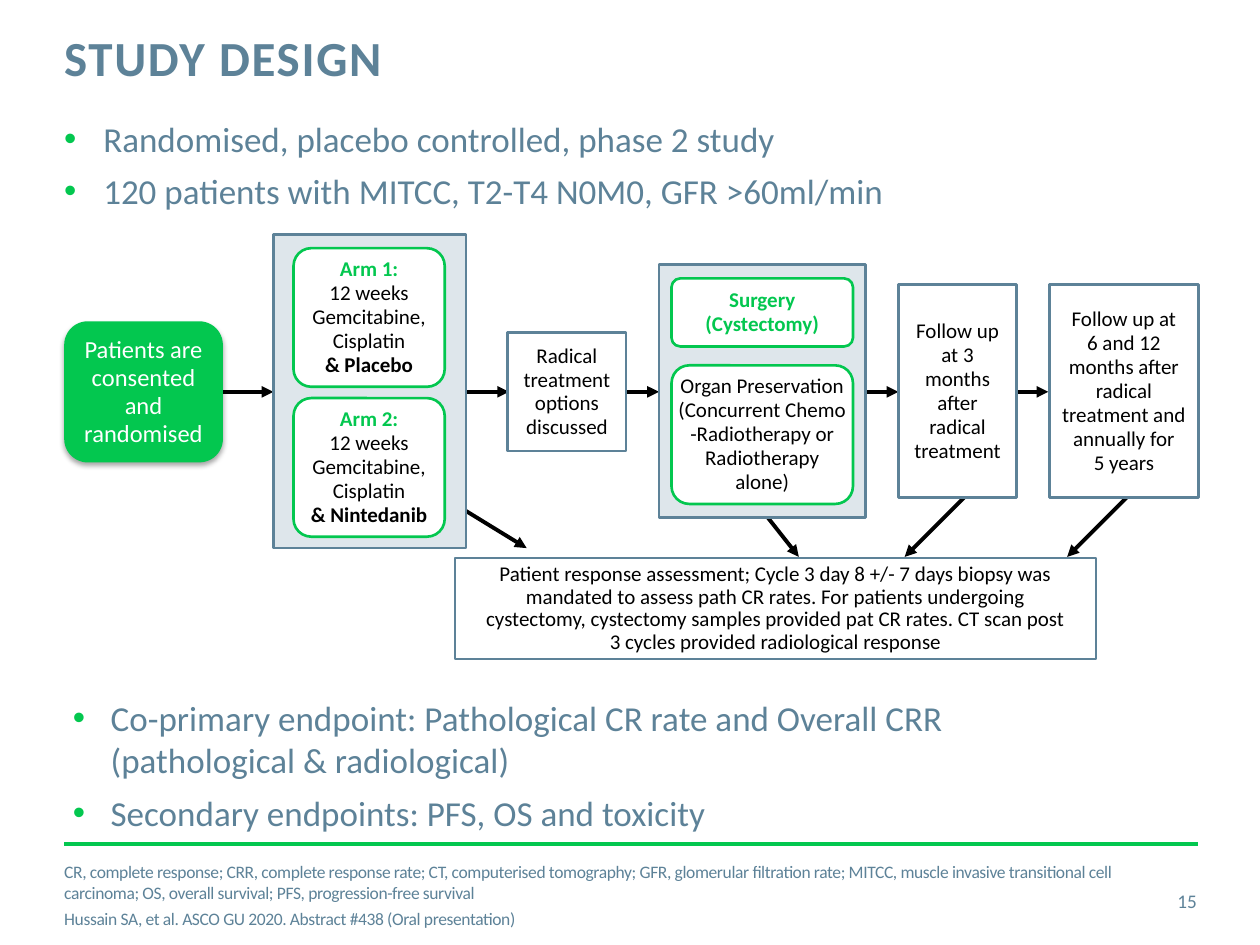
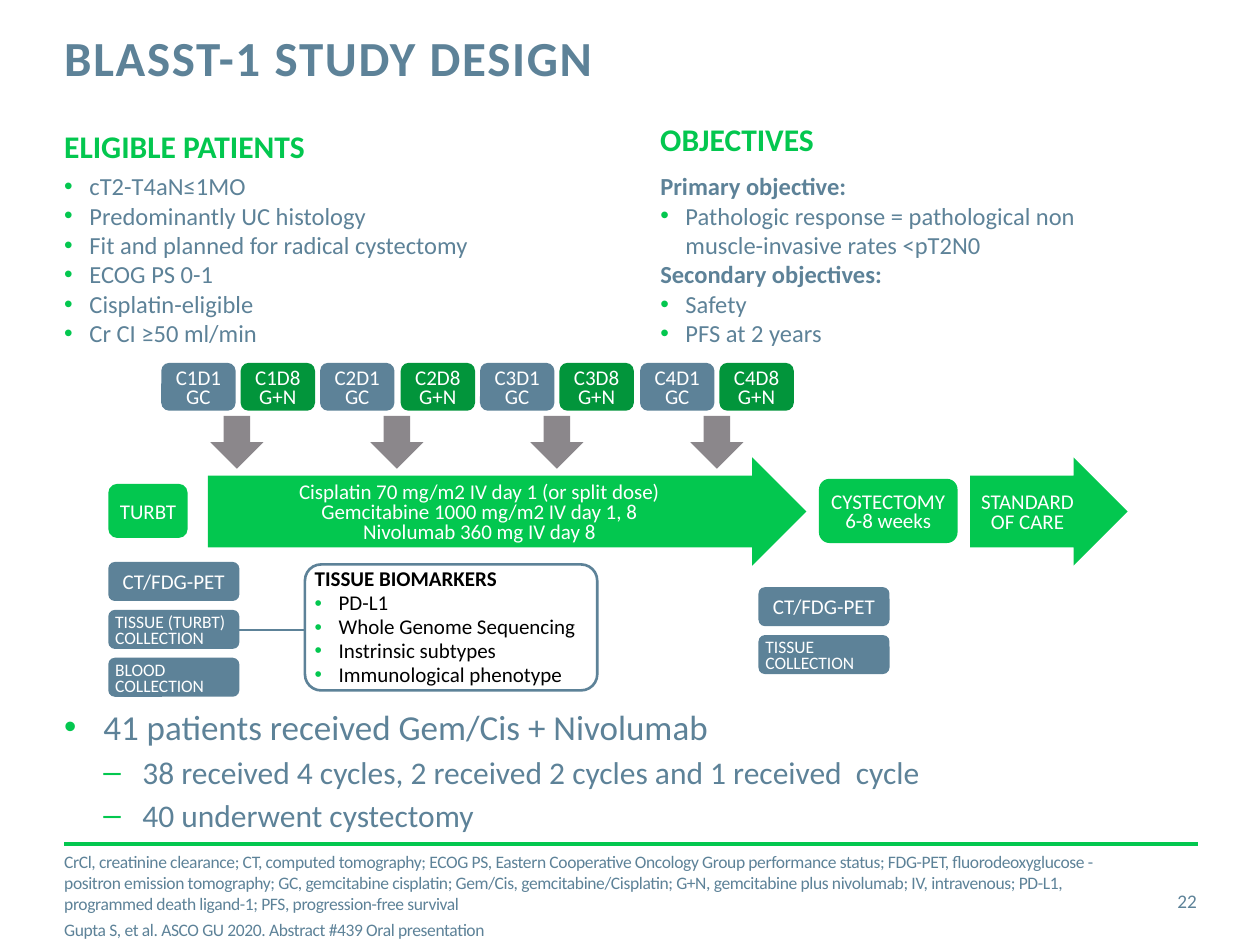
from copy import deepcopy

from lxml import etree
from pptx import Presentation
from pptx import util as u
from pptx.dml.color import RGBColor
from pptx.enum import shapes, text
from pptx.oxml import parse_xml
from pptx.oxml.ns import nsdecls, qn

PX = 9144  # 100 px to the inch
GREEN, DARK_GREEN, SLATE, PALE = "03C74F", "02953B", "5D8298", "DEE6EB"
GREY, BLACK, WHITE = "8B878B", "000000", "FFFFFF"
FONT = "Calibri"

rgb = RGBColor.from_string
KIND = shapes.MSO_SHAPE
TOP, MIDDLE = text.MSO_ANCHOR.TOP, text.MSO_ANCHOR.MIDDLE
CENTER, LEFT, RIGHT = text.PP_ALIGN.CENTER, text.PP_ALIGN.LEFT, text.PP_ALIGN.RIGHT
BULLET_LEVELS = {"• ": 1, "– ": 2}


def add_box(slide, kind, frame, paragraphs=(), fill=None, line=None, adjustments=(),
            margins=(4, 4, 4, 4), anchor=MIDDLE, size=12, color=BLACK, bold=False,
            tracking=0, hang=0, before=0, **layout):
    """Add a preset shape, or a text box if kind is None.

    A paragraph is a string or a list of (text, font changes); a leading
    "• " or "– " makes it a bullet, indented by hang px a level.
    """
    frame = [value * PX for value in frame]
    if kind is None:
        shape = slide.shapes.add_textbox(*frame)
    else:
        shape = slide.shapes.add_shape(kind, *frame)
        shape.shadow.inherit = False
        for index, value in enumerate(adjustments):
            shape.adjustments[index] = value
        if fill:
            shape.fill.solid()
            shape.fill.fore_color.rgb = rgb(fill)
        if line:
            shape.line.color.rgb = rgb(line)
            shape.line.width = u.Pt(1.5)
        else:
            shape.line.fill.background()

    text_frame = shape.text_frame
    text_frame.word_wrap = True
    text_frame.vertical_anchor = anchor
    for side, margin in zip(("left", "top", "right", "bottom"), margins):
        setattr(text_frame, f"margin_{side}", margin * PX)

    for index, content in enumerate(paragraphs):
        paragraph = text_frame.add_paragraph() if index else text_frame.paragraphs[0]
        runs = [(content, {})] if isinstance(content, str) else content
        marker = runs[0][0][:2]
        if marker in BULLET_LEVELS:
            runs = [(runs[0][0][2:], runs[0][1]), *runs[1:]]
            properties = paragraph._p.get_or_add_pPr()
            properties.set("marL", str(BULLET_LEVELS[marker] * hang * PX))
            properties.set("indent", str(-hang * PX))
            for bullet_part in (
                f'<a:buClr {nsdecls("a")}><a:srgbClr val="{GREEN}"/></a:buClr>',
                f'<a:buFont {nsdecls("a")} typeface="Arial"/>',
                f'<a:buChar {nsdecls("a")} char="{marker[0]}"/>',
            ):
                properties.append(parse_xml(bullet_part))
        for name, value in layout.items():
            setattr(paragraph, name, value)
        if index and before:
            paragraph.space_before = u.Pt(before)

        for words, changes in runs:
            values = {"size": size, "bold": bold, "color": color, **changes}
            for number, part in enumerate(words.split("\n")):
                if number:
                    paragraph.add_line_break()
                    paragraph._p[-1].append(deepcopy(run._r.rPr))
                run = paragraph.add_run()
                run.text = part
                font = {"name": FONT, "size": u.Pt(values["size"]), "bold": values["bold"]}
                for name, value in font.items():
                    setattr(run.font, name, value)
                run.font.color.rgb = rgb(values["color"])
                if tracking:
                    run._r.rPr.set("spc", str(tracking))
    return shape


def add_line(slide, start, end, color, width, arrow=False):
    connector = slide.shapes.add_connector(
        shapes.MSO_CONNECTOR.STRAIGHT, *(value * PX for value in (*start, *end)))
    connector.line.color.rgb = rgb(color)
    connector.line.width = u.Pt(width)
    if arrow:
        outline = connector.line._get_or_add_ln()
        etree.SubElement(outline, qn("a:tailEnd"), type="triangle")
    etree.SubElement(connector._element.spPr, qn("a:effectLst"))


presentation = Presentation()
presentation.slide_width, presentation.slide_height = 1000 * PX, 750 * PX

# Shared title, rule, footnotes and page number
NO_MARGINS = (0, 0, 0, 0)
pages = [
    ("STUDY DESIGN", "15", [
        "CR, complete response; CRR, complete response rate; CT, computerised tomography; "
        "GFR, glomerular filtration rate; MITCC, muscle invasive transitional cell carcinoma; "
        "OS, overall survival; PFS, progression-free survival",
        "Hussain SA, et al. ASCO GU 2020. Abstract #438 (Oral presentation)"]),
    ("BLASST-1 STUDY DESIGN", "22", [
        "CrCl, creatinine clearance; CT, computed tomography; ECOG PS, Eastern Cooperative "
        "Oncology Group performance status; FDG-PET, fluorodeoxyglucose - positron emission "
        "tomography; GC, gemcitabine cisplatin; Gem/Cis, gemcitabine/Cisplatin; G+N, "
        "gemcitabine plus nivolumab; IV, intravenous; PD-L1, programmed death ligand-1; "
        "PFS, progression-free survival",
        "Gupta S, et al. ASCO GU 2020. Abstract #439 Oral presentation"]),
]
for title, number, footnotes in pages:
    slide = presentation.slides.add_slide(presentation.slide_layouts[6])
    add_line(slide, (51, 670), (951, 670), GREEN, 2)
    add_box(slide, None, (51, 27, 717, 88), [title], margins=NO_MARGINS, anchor=TOP,
            size=28, color=SLATE, bold=True, tracking=100, line_spacing=u.Pt(30))
    add_box(slide, None, (51, 680, 835, 61), footnotes, margins=NO_MARGINS,
            size=10, color=SLATE, tracking=-20, before=3)
    add_box(slide, None, (886, 695, 64, 40), [number], margins=NO_MARGINS,
            size=11, color=SLATE, alignment=RIGHT)

trial_slide, blasst_slide = presentation.slides

# Study design: bullets above and below the flow chart
body = {"anchor": TOP, "size": 20, "color": SLATE}
add_box(trial_slide, None, (51, 93, 899, 101), [
    "• Randomised, placebo controlled, phase 2 study",
    "• 120 patients with MITCC, T2-T4 N0M0, GFR >60ml/min",
], margins=NO_MARGINS, hang=31, before=6, **body)
add_box(trial_slide, None, (48, 548, 835, 119), [
    "• Co-primary endpoint: Pathological CR rate and Overall CRR (pathological & radiological)",
    "• Secondary endpoints: PFS, OS and toxicity",
], margins=(10, 5, 10, 5), hang=30, before=6, **body)

flow_arrows = [((x, 311), (x + 40, 311)) for x in (177, 364, 483, 673, 792)]
assessment_arrows = [((369, 405), (418, 435)), ((593, 390), (634, 442)),
                     ((773, 387), (718, 442)), ((902, 387), (847, 442))]
for start, end in flow_arrows + assessment_arrows:
    add_line(trial_slide, start, end, BLACK, 2.25, arrow=True)

for panel in ((217, 186, 153, 249), (523, 210, 164, 201)):
    add_box(trial_slide, KIND.RECTANGLE, panel, fill=PALE, line=SLATE)

step = {"alignment": CENTER, "line_spacing": 0.95}
consent = add_box(trial_slide, KIND.ROUNDED_RECTANGLE, (51, 255, 126, 112),
                  ["Patients are\nconsented\nand randomised"],
                  fill=GREEN, size=14, color=WHITE, **step)
consent._element.spPr.find(qn("a:effectLst")).append(parse_xml(
    f'<a:outerShdw {nsdecls("a")} blurRad="{u.Pt(3.1)}" dist="{u.Pt(1.8)}" dir="5400000" '
    'rotWithShape="0"><a:srgbClr val="000000"><a:alpha val="35000"/></a:srgbClr></a:outerShdw>'))

option = {"fill": WHITE, "line": GREEN, "adjustments": [0.128], **step}
for top, arm, drug in ((197, "Arm 1:", "& Placebo"), (316, "Arm 2:", "& Nintedanib")):
    add_box(trial_slide, KIND.ROUNDED_RECTANGLE, (233, top, 120, 110), [
        [(arm, {"bold": True, "color": GREEN})],
        [("12 weeks\nGemcitabine,\nCisplatin\n", {}), (drug, {"bold": True})],
    ], **option)
add_box(trial_slide, KIND.ROUNDED_RECTANGLE, (533, 221, 144, 54),
        ["Surgery\n(Cystectomy)"], color=GREEN, bold=True, **option)
add_box(trial_slide, KIND.ROUNDED_RECTANGLE, (533, 290, 144, 110),
        ["Organ Preservation\n(Concurrent Chemo\n-Radiotherapy or\nRadiotherapy alone)"],
        margins=(0, 4, 0, 4), **option)

for frame, paragraphs in (
    ((403, 264, 94, 94), ["Radical\ntreatment\noptions\ndiscussed"]),
    ((713, 226, 94, 169), ["Follow up\nat 3\nmonths after", "radical treatment"]),
    ((833, 226, 118, 169), ["Follow up at\n6 and 12\nmonths after radical treatment "
                            "and annually for\n5 years"]),
):
    add_box(trial_slide, KIND.RECTANGLE, frame, paragraphs, fill=WHITE, line=SLATE, **step)
add_box(trial_slide, KIND.RECTANGLE, (361, 443, 509, 80), [
    "Patient response assessment; Cycle 3 day 8 +/- 7 days biopsy was\n"
    "mandated to assess path CR rates. For patients undergoing\n"
    "cystectomy, cystectomy samples provided pat CR rates. CT scan post\n"
    "3 cycles provided radiological response",
], fill=WHITE, line=SLATE, alignment=CENTER, line_spacing=0.9)

# BLASST-1: patients, objectives and results
add_box(blasst_slide, None, (51, 560, 899, 104), [
    "• 41 patients received Gem/Cis + Nivolumab",
    [("– 38 received 4 cycles, 2 received 2 cycles and 1 received  cycle", {"size": 18})],
    [("– 40 underwent cystectomy", {"size": 18})],
], margins=NO_MARGINS, hang=31, before=3, **body)

column = {"margins": (0, 5, 10, 5), "anchor": TOP}
columns = [
    (51, 96, "ELIGIBLE PATIENTS", [
        "• cT2-T4aN≤1MO", "• Predominantly UC histology",
        "• Fit and planned for radical cystectomy", "• ECOG PS 0-1",
        "• Cisplatin-eligible", "• Cr CI ≥50 ml/min"]),
    (524, 90, "OBJECTIVES", [
        [("Primary objective:", {"bold": True})],
        "• Pathologic response = pathological non muscle-invasive rates <pT2N0",
        [("Secondary objectives:", {"bold": True})],
        "• Safety", "• PFS at 2 years"]),
]
for left, top, heading, points in columns:
    add_box(blasst_slide, None, (left, top, 300, 40), [heading],
            size=18, color=GREEN, bold=True, **column)
    add_box(blasst_slide, None, (left, 131, 402, 152), points,
            size=14, color=SLATE, hang=20, **column)

# BLASST-1: treatment timeline
label = {"margins": (4, 8, 4, 4), "color": WHITE, "line_spacing": 0.75}
for index in range(8):
    cycle, second_dose = index // 2 + 1, index % 2
    day, drugs, fill = ("D8", "G+N", DARK_GREEN) if second_dose else ("D1", "GC", SLATE)
    add_box(blasst_slide, KIND.ROUNDED_RECTANGLE, (128 + index * 190 // 3, 288, 59, 38),
            [f"C{cycle}{day}\n{drugs}"], fill=fill, alignment=CENTER, **label)
for cycle in range(4):
    add_box(blasst_slide, KIND.DOWN_ARROW, (167 + 127 * cycle, 330, 42, 42), fill=GREY)

for left, arrow_width, text_left, text_width, words in (
    (165, 475, 165, 431, "Cisplatin 70 mg/m2 IV day 1 (or split dose)\n"
     "Gemcitabine 1000 mg/m2 IV day 1, 8\nNivolumab 360 mg IV day 8"),
    (770, 125, 760, 111, "STANDARD\nOF CARE"),
):
    add_box(blasst_slide, KIND.RIGHT_ARROW, (left, 363, arrow_width, 86),
            fill=GREEN, adjustments=[0.662, 0.5])
    add_box(blasst_slide, None, (text_left, 384, text_width, 47), [words],
            color=WHITE, alignment=CENTER, line_spacing=0.8)
for frame, words in (((86, 384, 63, 43), "TURBT"),
                     ((650, 380, 110, 51), "CYSTECTOMY\n6-8 weeks")):
    add_box(blasst_slide, KIND.ROUNDED_RECTANGLE, frame, [words],
            fill=GREEN, alignment=CENTER, **label)

# BLASST-1: scans and samples
add_line(blasst_slide, (190, 500), (242, 500), SLATE, 1.5)
for left, top, samples in (
    (86, 446, ["TISSUE (TURBT)\nCOLLECTION", "BLOOD\nCOLLECTION"]),
    (602, 466, ["TISSUE COLLECTION"]),
):
    for row, words in enumerate(["CT/FDG-PET", *samples]):
        size, alignment = (10, LEFT) if row else (12, CENTER)
        add_box(blasst_slide, KIND.ROUNDED_RECTANGLE, (left, top + 38 * row, 104, 31),
                [words], fill=SLATE, size=size, alignment=alignment, **label)
add_box(blasst_slide, KIND.ROUNDED_RECTANGLE, (242, 448, 232, 100), [
    [("TISSUE BIOMARKERS", {"bold": True})],
    "• PD-L1", "• Whole Genome Sequencing", "• Instrinsic subtypes",
    "• Immunological phenotype",
], fill=WHITE, line=SLATE, adjustments=[0.128], hang=19, alignment=LEFT, line_spacing=0.95)

presentation.save("out.pptx")
